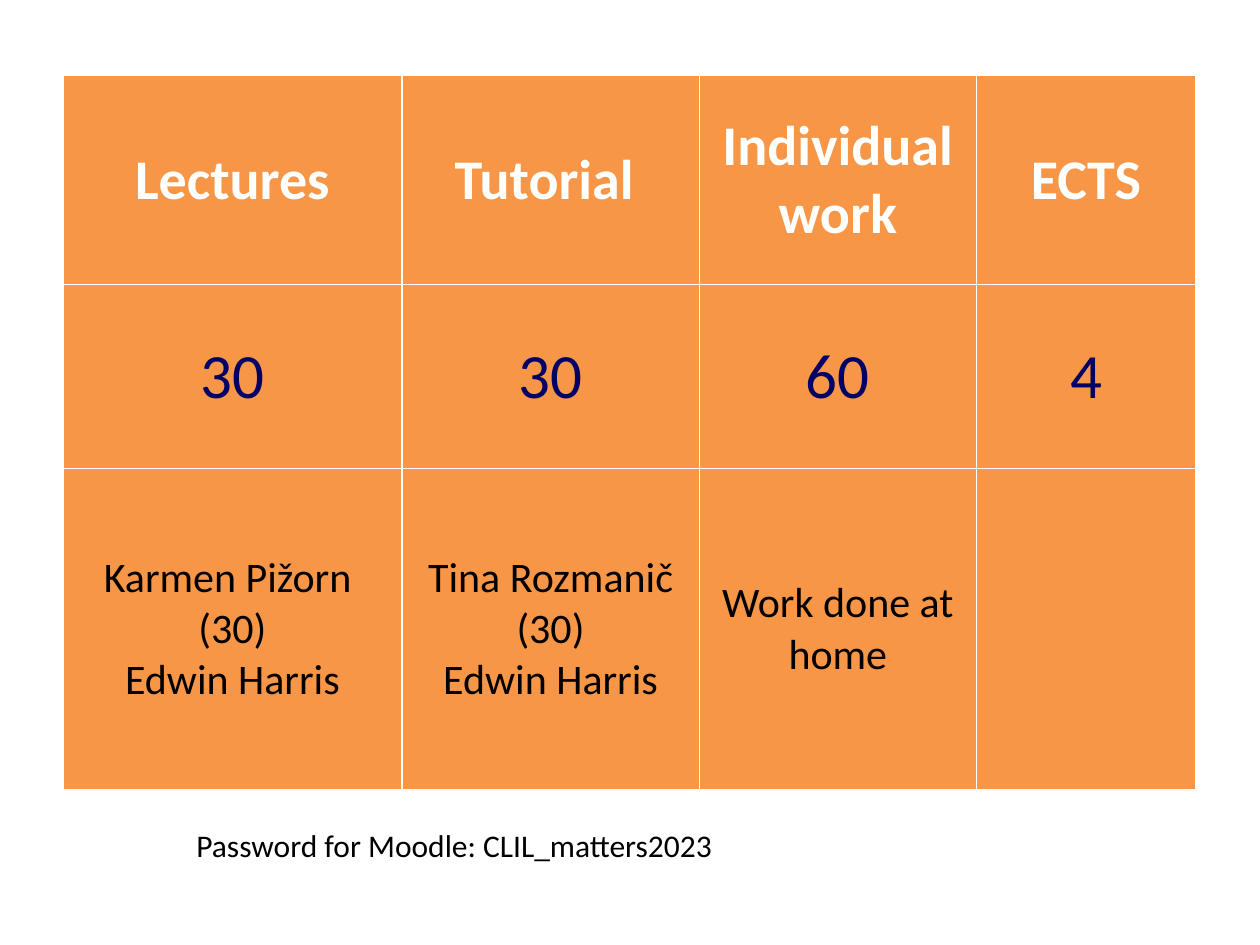
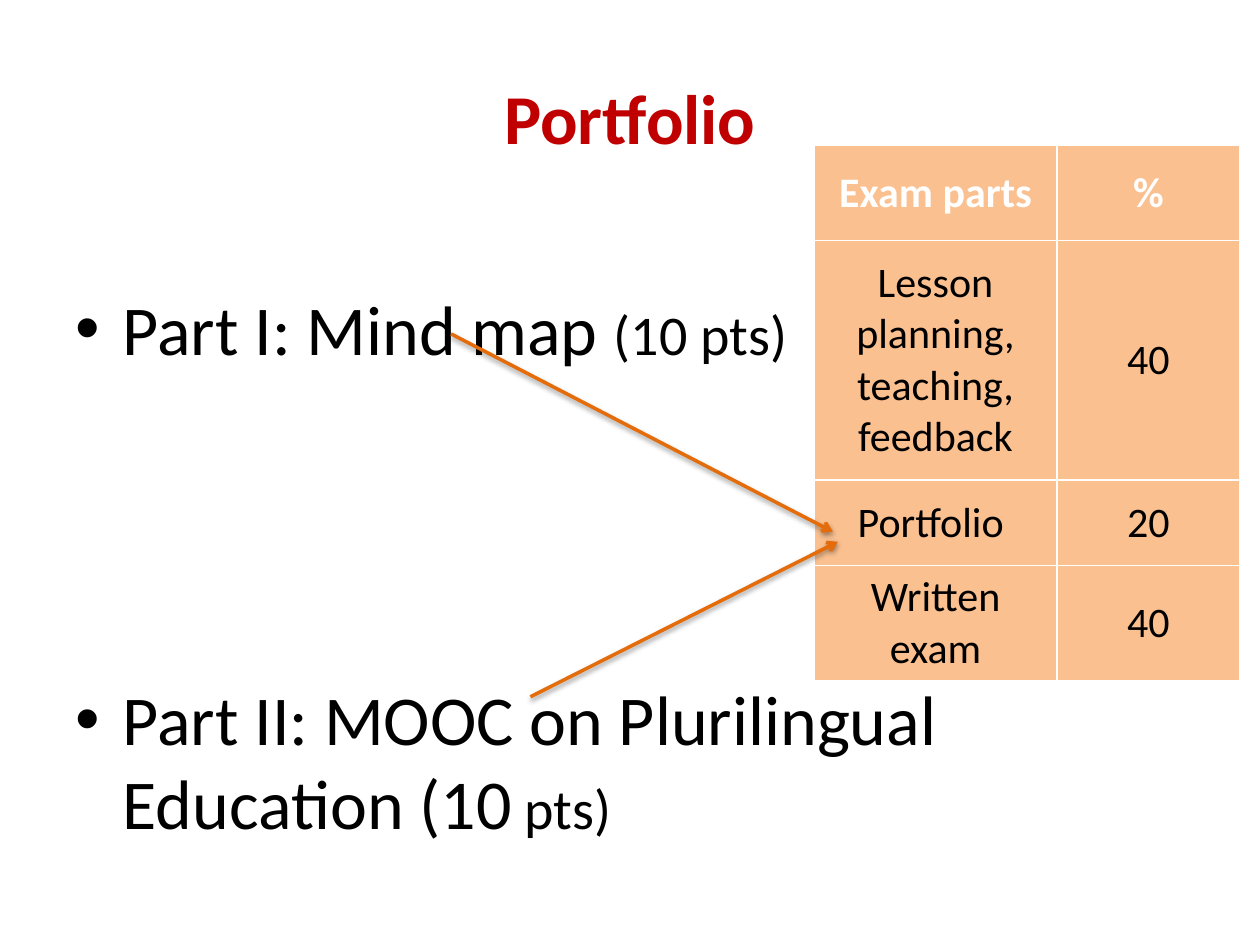
from lxml import etree
from pptx import Presentation
from pptx.dml.color import RGBColor
from pptx.enum import shapes, text
from pptx.oxml import ns
from pptx.util import Inches, Pt

FACE = "Calibri"
WHITE = RGBColor(0xFF, 0xFF, 0xFF)
BLACK = RGBColor(0, 0, 0)
NAVY = RGBColor(0, 0, 0x66)
RED = RGBColor(0xC0, 0, 0)
ORANGE = RGBColor(0xF7, 0x96, 0x46)
PEACH = RGBColor(0xFA, 0xC0, 0x90)
RUST = RGBColor(0xE4, 0x6C, 0x0A)

HOURS = [
    ["Lectures", "Tutorial ", "Individual\nwork", "ECTS"],
    ["30", "30", "60", "4"],
    ["Karmen Pižorn \n(30)\nEdwin Harris", "Tina Rozmanič\n(30)\nEdwin Harris",
     "Work done at home", ""],
]
EXAM = [
    ["Exam parts", "%"],
    ["Lesson planning, teaching, feedback", "40"],
    ["Portfolio ", "20"],
    ["Written exam", "40"],
]
PARTS = [
    [("Part I: Mind map ", 40), ("(10 pts)", 32)],
    [("Part II: MOOC on Plurilingual Education (10", 40), (" pts)", 32)],
]


def style(font, size, color=BLACK, bold=False):
    for key, value in {"name": FACE, "size": Pt(size), "bold": bold}.items():
        setattr(font, key, value)
    font.color.rgb = color


def place(shape, box):
    for key, value in zip(("left", "top", "width", "height"), box):
        setattr(shape, key, Inches(value))


def add_grid(slide, left, top, cols, rows, data, fill, looks):
    """Draw a table; looks holds one (size, color, bold) for each row."""
    box = [Inches(v) for v in (left, top, sum(cols), sum(rows))]
    table = slide.shapes.add_table(len(rows), len(cols), *box).table
    for col, width in zip(table.columns, cols):
        col.width = Inches(width)
    for row, height, words, look in zip(table.rows, rows, data, looks):
        row.height = Inches(height)
        for cell, word in zip(row.cells, words):
            cell.fill.solid()
            cell.fill.fore_color.rgb = fill
            cell.vertical_anchor = text.MSO_ANCHOR.MIDDLE
            cell.text = word
            for para in cell.text_frame.paragraphs:
                para.alignment = text.PP_ALIGN.CENTER
                style(para.font, *look)
                for run in para.runs:
                    style(run.font, *look)


def add_arrow(slide, start, end):
    line = slide.shapes.add_connector(
        shapes.MSO_CONNECTOR.STRAIGHT, *[Inches(v) for v in start + end])
    line.line.color.rgb = RUST
    line.line.width = Pt(2)
    etree.SubElement(line.line._get_or_add_ln(), ns.qn("a:tailEnd"), type="arrow")
    glow = etree.SubElement(line._element.spPr, ns.qn("a:effectLst"))
    shade = etree.SubElement(
        glow, ns.qn("a:outerShdw"), blurRad=str(Pt(3.1)), dist=str(Pt(1.6)),
        dir="5400000", rotWithShape="0")
    tint = etree.SubElement(shade, ns.qn("a:srgbClr"), val=str(BLACK))
    etree.SubElement(tint, ns.qn("a:alpha"), val="38000")


def fill_title(shape, words):
    place(shape, (0.5, 0.3, 9, 1.25))
    shape.text_frame.text = words
    para = shape.text_frame.paragraphs[0]
    para.alignment = text.PP_ALIGN.CENTER
    style(para.runs[0].font, 40, RED, True)


def fill_list(shape, items):
    place(shape, (0.5, 1.55, 9, 5.33))
    frame = shape.text_frame
    frame.auto_size = text.MSO_AUTO_SIZE.NONE
    looks = [(2.0, 0), (1.0, 175)]
    for i, (item, (pitch, gap)) in enumerate(zip(items, looks)):
        para = frame.add_paragraph() if i else frame.paragraphs[0]
        para.line_spacing = pitch
        para.space_before = Pt(gap)
        for words, size in item:
            run = para.add_run()
            run.text = words
            style(run.font, size)


def add_note(slide, box, words):
    frame = slide.shapes.add_textbox(*[Inches(v) for v in box]).text_frame
    frame.word_wrap = True
    frame.text = words
    style(frame.paragraphs[0].runs[0].font, 18)


def hours_slide(deck):
    slide = deck.slides.add_slide(deck.slide_layouts[6])
    add_grid(slide, 0.5, 0.6, [2.69, 2.36, 2.2, 1.74], [1.66, 1.46, 2.55],
             HOURS, ORANGE, [(32, WHITE, True), (36, NAVY), (24,)])
    add_note(slide, (1.46, 6.51, 7.09, 0.4),
             "Password for Moodle: CLIL_matters2023")


def portfolio_slide(deck):
    slide = deck.slides.add_slide(deck.slide_layouts[1])
    fill_title(slide.shapes.title, "Portfolio")
    fill_list(slide.placeholders[1], PARTS)
    add_grid(slide, 6.46, 1.15, [1.93, 1.45], [0.76, 1.9, 0.68, 0.83],
             EXAM, PEACH, [(24, WHITE, True)] + [(24,)] * 3)
    add_arrow(slide, (3.58, 2.65), (6.61, 4.22))
    add_arrow(slide, (4.21, 5.53), (6.65, 4.3))


def main():
    deck = Presentation()
    deck.slide_width, deck.slide_height = Inches(10), Inches(7.5)
    hours_slide(deck)
    portfolio_slide(deck)
    deck.save("out.pptx")


if __name__ == "__main__":
    main()
